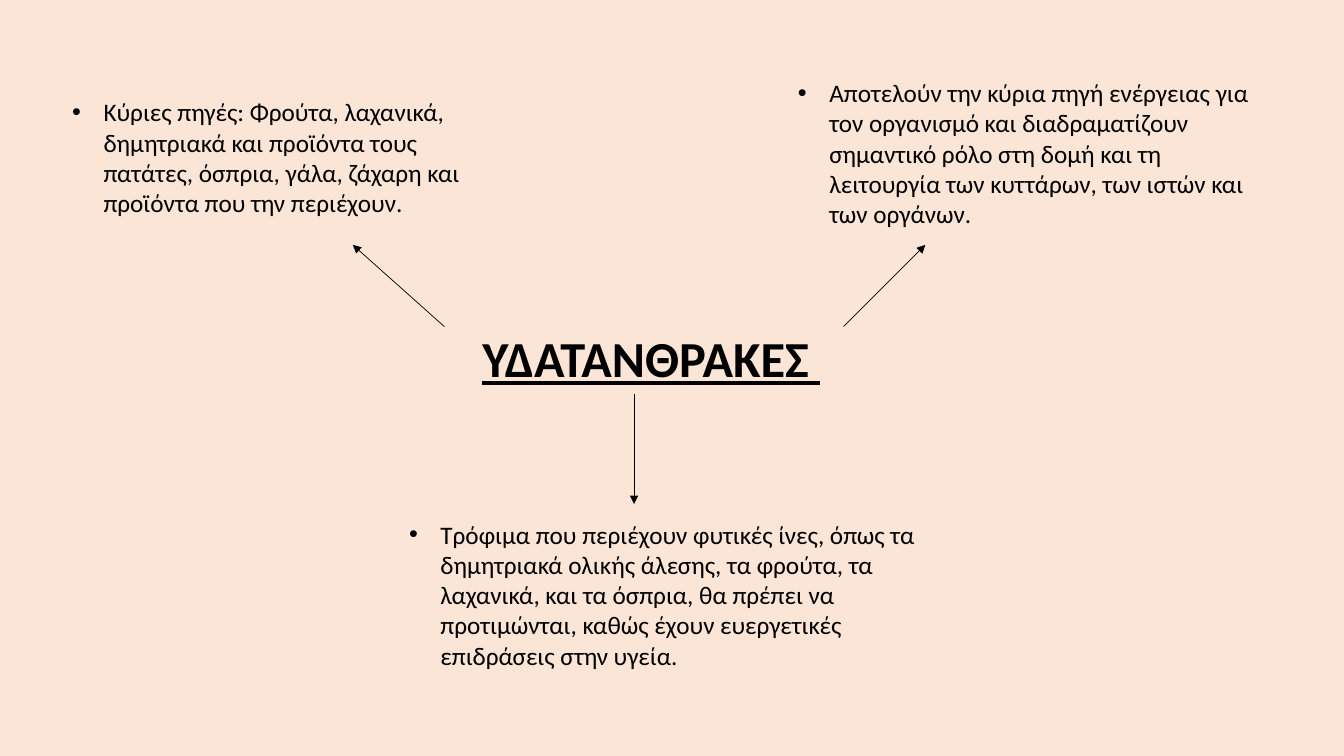
from pptx import Presentation
from pptx.dml.color import RGBColor
from pptx.enum.shapes import MSO_CONNECTOR
from pptx.oxml.ns import qn
from pptx.util import Cm, Pt
from lxml.etree import SubElement

COLOURS = {"background": "FBE5D6", "ink": "000000"}
HEADING = {"size": Pt(36), "bold": True, "underline": True}
BODY = {"size": Pt(18)}
BULLET_INDENT = Cm(0.79)

# left, top, width, height in cm, then the wording
FACTS = [
    (1.57, 2.31, 10.34, 3.33,
     "Κύριες πηγές: Φρούτα, λαχανικά, δημητριακά και προϊόντα τους πατάτες, "
     "όσπρια, γάλα, ζάχαρη και προϊόντα που την περιέχουν."),
    (19.86, 1.83, 12.32, 4.88,
     "Αποτελούν την κύρια πηγή ενέργειας για τον οργανισμό και διαδραματίζουν "
     "σημαντικό ρόλο στη δομή και τη λειτουργία των κυττάρων, των ιστών και "
     "των οργάνων."),
    (10.06, 12.95, 14.22, 6.1,
     "Τρόφιμα που περιέχουν φυτικές ίνες, όπως τα δημητριακά ολικής άλεσης, "
     "τα φρούτα, τα λαχανικά, και τα όσπρια, θα πρέπει να προτιμώνται, καθώς "
     "έχουν ευεργετικές επιδράσεις στην υγεία."),
]

# start x, start y, end x, end y in cm
ARROWS = [
    (11.2, 8.23, 8.89, 6.17),
    (21.26, 8.23, 23.32, 6.17),
    (15.98, 9.93, 15.98, 12.7),
]


class ConceptMap:
    """Holds the style and the slide being drawn."""

    def __init__(self, slide, font, colours):
        self.slide = slide
        self.font = font
        self.colours = colours

    def colour(self, name):
        return RGBColor.from_string(self.colours[name])

    def background(self):
        fill = self.slide.background.fill
        fill.solid()
        fill.fore_color.rgb = self.colour("background")

    def text(self, left, top, width, height, wording, style):
        box = self.slide.shapes.add_textbox(Cm(left), Cm(top), Cm(width), Cm(height))
        box.text_frame.word_wrap = True
        paragraph = box.text_frame.paragraphs[0]
        run = paragraph.add_run()
        run.text = wording
        for attribute, value in {"name": self.font, **style}.items():
            setattr(run.font, attribute, value)
        run.font.color.rgb = self.colour("ink")
        return paragraph

    def fact(self, left, top, width, height, wording):
        """Add a bulleted text with a hanging indent."""
        paragraph = self.text(left, top, width, height, wording, BODY)
        properties = paragraph._p.get_or_add_pPr()
        properties.set("marL", str(BULLET_INDENT))
        properties.set("indent", str(-BULLET_INDENT))
        SubElement(properties, qn("a:buFont"), typeface="Arial")
        SubElement(properties, qn("a:buChar"), char="•")

    def arrow(self, *ends):
        arrow = self.slide.shapes.add_connector(
            MSO_CONNECTOR.STRAIGHT, *(Cm(end) for end in ends))
        arrow.line.width = Pt(0.5)
        arrow.line.color.rgb = self.colour("ink")
        SubElement(arrow.line._get_or_add_ln(), qn("a:tailEnd"), type="triangle")
        SubElement(arrow._element.spPr, qn("a:effectLst"))


def main():
    deck = Presentation()
    deck.slide_width, deck.slide_height = Cm(33.87), Cm(19.05)
    concept_map = ConceptMap(
        deck.slides.add_slide(deck.slide_layouts[6]), "Calibri", COLOURS)
    concept_map.background()
    concept_map.text(11.91, 8.13, 16.15, 1.8, "ΥΔΑΤΑΝΘΡΑΚΕΣ ", HEADING)
    for fact in FACTS:
        concept_map.fact(*fact)
    for ends in ARROWS:
        concept_map.arrow(*ends)
    deck.save("out.pptx")


if __name__ == "__main__":
    main()
